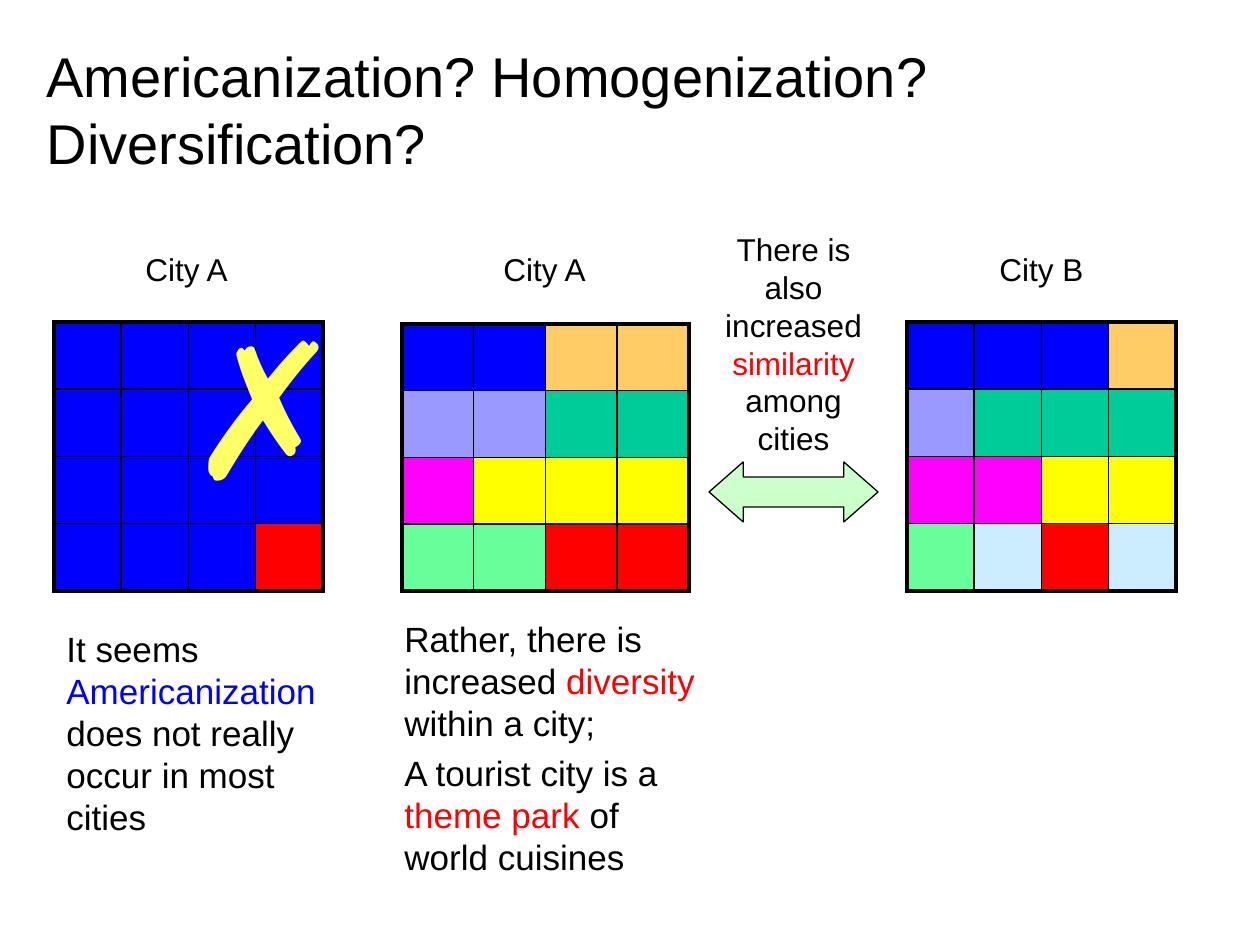
from lxml import etree
from pptx import Presentation
from pptx.dml.color import RGBColor
from pptx.enum.shapes import MSO_SHAPE
from pptx.enum.text import MSO_ANCHOR, MSO_AUTO_SIZE, PP_ALIGN
from pptx.oxml.ns import qn
from pptx.util import Pt

PX = 914400 / 126
LEFT, CENTER = PP_ALIGN.LEFT, PP_ALIGN.CENTER
TOP = MSO_ANCHOR.TOP
NO_AUTOFIT = MSO_AUTO_SIZE.NONE
DOUBLE_ARROW = MSO_SHAPE.LEFT_RIGHT_ARROW
TITLE_ONLY = 5
FONT = "Arial"
COLORS = {
    "black": "000000", "blue": "0000FF", "orange": "FFCC66", "lilac": "9999FF",
    "teal": "00CC99", "magenta": "FF00FF", "yellow": "FFFF00", "green": "66FF99",
    "red": "FF0000", "sky": "CCECFF", "mint": "CCFFCC", "lemon": "FFFF66",
}
RGB = {name: RGBColor.from_string(value) for name, value in COLORS.items()}


def place(shape, box):
    shape.left, shape.top, shape.width, shape.height = [round(v * PX) for v in box]


def write(shape, paragraphs, size, align=LEFT, wrap=True):
    frame = shape.text_frame
    frame.word_wrap = wrap
    frame.auto_size = NO_AUTOFIT
    frame.vertical_anchor = TOP
    for index, pieces in enumerate(paragraphs):
        paragraph = frame.add_paragraph() if index else frame.paragraphs[0]
        paragraph.alignment = align
        if len(paragraphs) > 1:
            paragraph.space_after = Pt(size / 4)
        for text, color in pieces:
            for line_number, line in enumerate(text.split("\n")):
                if line_number:
                    paragraph.add_line_break()
                if line:
                    run = paragraph.add_run()
                    run.text = line
                    run.font.name = FONT
                    run.font.size = Pt(size)
                    run.font.color.rgb = RGB[color]


presentation = Presentation()
presentation.slide_width = round(1260 * PX)
presentation.slide_height = round(945 * PX)
slide = presentation.slides.add_slide(presentation.slide_layouts[TITLE_ONLY])

title = slide.shapes.title
place(title, (34, 35, 953, 147))
write(title, [[("Americanization? Homogenization? Diversification?", "black")]], 32)

city_grids = [
    ((402, 324, 287, 267), [
        "blue blue orange orange",
        "lilac lilac teal teal",
        "magenta yellow yellow yellow",
        "green green red red",
    ]),
    ((54, 322, 269, 269), ["blue blue blue blue"] * 3 + ["blue blue blue red"]),
    ((907, 322, 269, 269), [
        "blue blue blue orange",
        "lilac teal teal teal",
        "magenta magenta yellow yellow",
        "green sky red sky",
    ]),
]
for box, rows in city_grids:
    table = slide.shapes.add_table(4, 4, *[round(v * PX) for v in box]).table
    for column in table.columns:
        column.width = round(box[2] * PX / 4)
    for row in table.rows:
        row.height = round(box[3] * PX / 4)
    for row_index, row_colors in enumerate(rows):
        for column_index, color in enumerate(row_colors.split()):
            cell = table.cell(row_index, column_index)
            properties = cell._tc.get_or_add_tcPr()
            outer_edges = {
                "L": column_index == 0, "R": column_index == 3,
                "T": row_index == 0, "B": row_index == 3,
            }
            for side, is_outer in outer_edges.items():
                width = Pt(2.25 if is_outer else 1)
                border = etree.SubElement(properties, qn(f"a:ln{side}"), w=str(width))
                fill = etree.SubElement(border, qn("a:solidFill"))
                etree.SubElement(fill, qn("a:srgbClr"), val=COLORS["black"])
            cell.fill.solid()
            cell.fill.fore_color.rgb = RGB[color]

americanization = [[
    ("It seems ", "black"),
    ("Americanization", "blue"),
    (" does not really occur in most cities", "black"),
]]
diversity = [
    [
        ("Rather, there is increased ", "black"),
        ("diversity\n", "red"),
        ("within a city;", "black"),
    ],
    [
        ("A tourist city is a \n", "black"),
        ("theme park", "red"),
        (" of \nworld cuisines", "black"),
    ],
]
similarity = [[
    ("There is also increased ", "black"),
    ("similarity", "red"),
    (" among cities", "black"),
]]
text_boxes = [
    ((54, 621, 287, 223), americanization, 20, LEFT, True),
    ((392, 611, 397, 275), diversity, 20, LEFT, True),
    ((709, 224, 169, 239), similarity, 18, CENTER, True),
    ((133, 244, 108, 50), [[("City A", "black")]], 18, LEFT, False),
    ((491, 244, 108, 50), [[("City A", "black")]], 18, LEFT, False),
    ((987, 244, 108, 50), [[("City B", "black")]], 18, LEFT, False),
]
for box, paragraphs, size, align, wrap in text_boxes:
    text_box = slide.shapes.add_textbox(0, 0, 0, 0)
    place(text_box, box)
    write(text_box, paragraphs, size, align, wrap)

arrow = slide.shapes.add_shape(DOUBLE_ARROW, 0, 0, 0, 0)
place(arrow, (709, 462, 169, 60))
arrow.adjustments[0] = 0.5
arrow.adjustments[1] = 0.57
arrow.shadow.inherit = False
arrow.fill.solid()
arrow.fill.fore_color.rgb = RGB["mint"]
arrow.line.color.rgb = RGB["black"]
arrow.line.width = Pt(0.75)

cross = slide.shapes.add_textbox(0, 0, 0, 0)
place(cross, (174, 284, 145, 239))
write(cross, [[("✗", "lemon")]], 108, wrap=False)

presentation.save("out.pptx")
